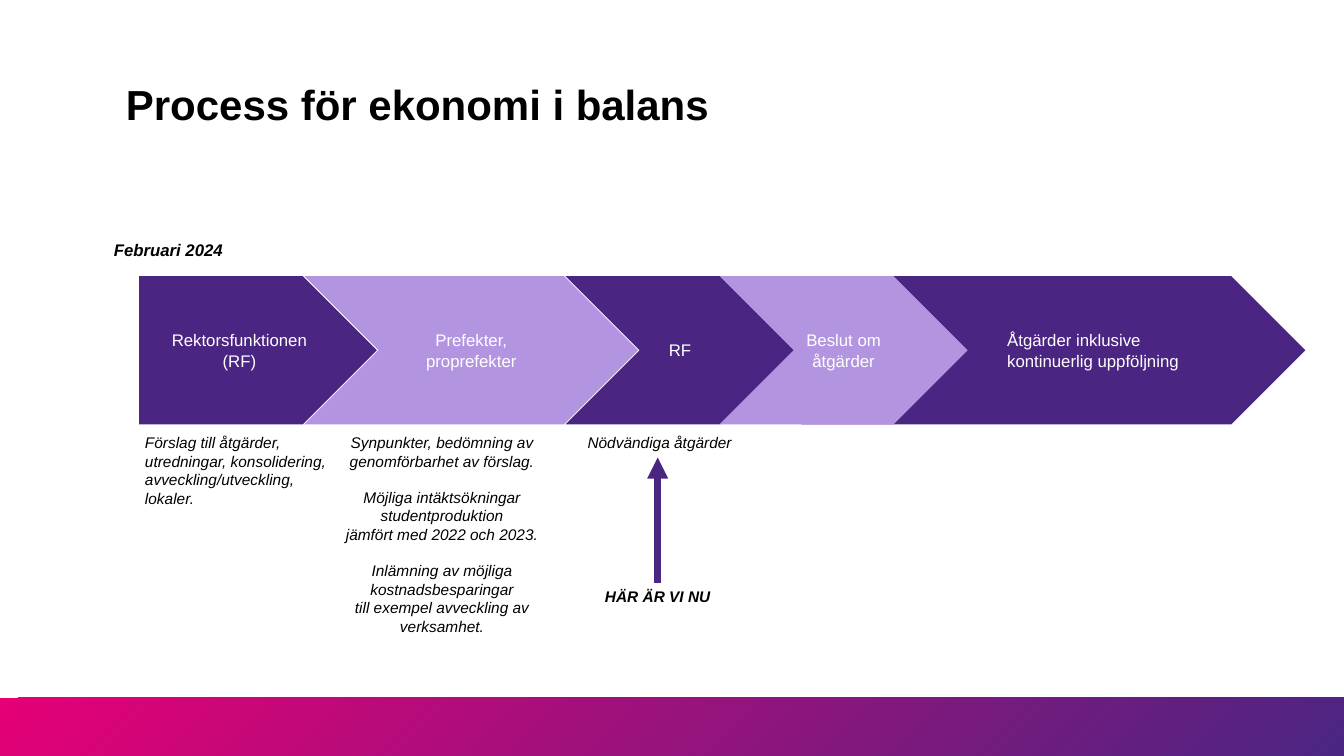
from dataclasses import dataclass
from lxml.etree import SubElement as Sub
from pptx import Presentation
from pptx.dml.color import RGBColor as Rgb
from pptx.enum.shapes import MSO_CONNECTOR as Conn, MSO_SHAPE as Kind
from pptx.enum.text import MSO_ANCHOR as Anchor, PP_ALIGN as Align
from pptx.oxml.ns import qn
from pptx.util import Inches, Pt


@dataclass(frozen=True)
class Theme:
    """Colours, font and type sizes of the slide."""
    dark: str = "4B2582"
    light: str = "B394E1"
    pink: str = "E50076"
    ink: str = "000000"
    white: str = "FFFFFF"
    font: str = "Arial"
    head: float = 30
    body: float = 12
    note: float = 11
    gap: float = 12.65
    line: float = 5


@dataclass(frozen=True)
class Box:
    """An area in hundredths of the slide's width and height."""
    x: float
    y: float
    w: float
    h: float

    def inner(self, x, y, w, h):
        """Return an area placed from this box's top left corner."""
        return Box(self.x + x, self.y + y, w, h)

    def emu(self):
        """Return left, top, width and height as lengths."""
        return (col(self.x), row(self.y), col(self.w), row(self.h))


THEME = Theme()
WIDE, HIGH = Inches(13.333), Inches(7.5)
LINE = 3.87

STEPS = [
    (Kind.PENTAGON, 0, 17.7, THEME.dark, ["Rektorsfunktionen", "(RF)"], None),
    (Kind.CHEVRON, 12.3, 24.83, THEME.light, ["Prefekter, proprefekter"], None),
    (Kind.CHEVRON, 49.28, 37.5, THEME.dark,
     ["Åtgärder inklusive", "kontinuerlig uppföljning"], 9.8),
    (Kind.CHEVRON, 31.73, 17.03, THEME.dark, ["RF"], None),
    (Kind.CHEVRON, 43.2, 18.45, THEME.light, ["Beslut om åtgärder"], None),
]

NOTES = [
    (0, 15.23, 11.2, Align.LEFT, [
        ["Förslag till åtgärder, utredningar, konsolidering, avveckling/utveckling,",
         "lokaler."]]),
    (14.33, 17.03, 28.53, Align.CENTER, [
        ["Synpunkter, bedömning av", "genomförbarhet av förslag."],
        ["Möjliga intäktsökningar", "studentproduktion",
         "jämfört med 2022 och 2023."],
        ["Inlämning av möjliga", "kostnadsbesparingar",
         "till exempel avveckling av verksamhet."]]),
    (32.93, 15.23, LINE, Align.LEFT, [["Nödvändiga åtgärder"]]),
]


def col(n):
    """Turn columns into a length."""
    return round(WIDE * n / 100)


def row(n):
    """Turn rows into a length."""
    return round(HIGH * n / 100)


def write(frame, groups, size, tint, align=Align.LEFT, bold=False, slant=False):
    """Fill a frame with groups of lines, with a gap between groups."""
    para = None
    for group in groups:
        for k, line in enumerate(group):
            first = para is None
            para = frame.paragraphs[0] if first else frame.add_paragraph()
            para.alignment = align
            if k == 0 and not first:
                para.space_before = Pt(THEME.gap)
            run = para.add_run()
            run.text = line
            font = run.font
            font.name, font.size = THEME.font, Pt(size)
            font.bold, font.italic = bold, slant
            font.color.rgb = Rgb.from_string(tint)


def label(slide, box, groups, size, wrap=True, **style):
    """Add a text box and return its frame."""
    frame = slide.shapes.add_textbox(*box.emu()).text_frame
    frame.word_wrap = wrap
    write(frame, groups, size, THEME.ink, **style)
    return frame


def plain(slide, kind, box):
    """Add a shape with neither shadow nor outline."""
    shape = slide.shapes.add_shape(kind, *box.emu())
    shape.shadow.inherit = False
    shape.line.fill.background()
    return shape


def footer(slide, box):
    """Draw the gradient band."""
    fill = plain(slide, Kind.RECTANGLE, box).fill
    fill.gradient()
    fill.gradient_angle = 315
    for stop, spot, tint in zip(fill.gradient_stops, (0, 1), (THEME.pink, THEME.dark)):
        stop.position = spot
        stop.color.rgb = Rgb.from_string(tint)


def title(slide, box):
    """Write the heading."""
    frame = label(slide, box, [["Process för ekonomi i balans"]], THEME.head, bold=True)
    frame.vertical_anchor = Anchor.MIDDLE
    frame.paragraphs[0].line_spacing = 0.9


def flow(slide, box):
    """Draw the chain of process steps."""
    for kind, x, w, tint, lines, inset in STEPS:
        shape = plain(slide, kind, box.inner(x, 0, w, box.h))
        shape.fill.solid()
        shape.fill.fore_color.rgb = Rgb.from_string(tint)
        frame = shape.text_frame
        frame.word_wrap = True
        frame.vertical_anchor = Anchor.MIDDLE
        if inset:
            frame.margin_left = col(inset)
        align = Align.LEFT if inset else Align.CENTER
        write(frame, [lines], THEME.body, THEME.white, align)


def notes(slide, box):
    """Write the remarks below the steps."""
    for x, w, h, align, groups in NOTES:
        label(slide, box.inner(x, 0, w, h), groups, THEME.note, align=align, slant=True)


def marker(slide, box):
    """Draw the arrow and words that show the current stage."""
    mid, base = col(box.x + box.w / 2), box.h - LINE
    arrow = slide.shapes.add_connector(
        Conn.STRAIGHT, mid, row(box.y), mid, row(box.y + base))
    arrow.line.width = Pt(THEME.line)
    arrow.line.color.rgb = Rgb.from_string(THEME.dark)
    props = arrow._element.spPr
    Sub(props.find(qn("a:ln")), qn("a:headEnd"), type="triangle")
    Sub(props, qn("a:effectLst"))
    label(slide, box.inner(0, base, box.w, LINE), [["HÄR ÄR VI NU"]], THEME.note,
          align=Align.CENTER, bold=True, slant=True)


def main():
    """Build and save the slide."""
    deck = Presentation()
    deck.slide_width, deck.slide_height = WIDE, HIGH
    slide = deck.slides.add_slide(deck.slide_layouts[6])
    footer(slide, Box(0, 92.27, 100, 7.73))
    title(slide, Box(8.63, 6.53, 73.8, 15.2))
    flow(slide, Box(10.35, 36.53, 86.78, 19.6))
    label(slide, Box(7.73, 31.07, 10.05, 4), [["Februari 2024"]], THEME.body,
          wrap=False, bold=True, slant=True)
    notes(slide, Box(10.05, 56.67, 48.16, 28.53))
    marker(slide, Box(43.65, 60.53, 10.58, 20.4))
    deck.save("out.pptx")


if __name__ == "__main__":
    main()
